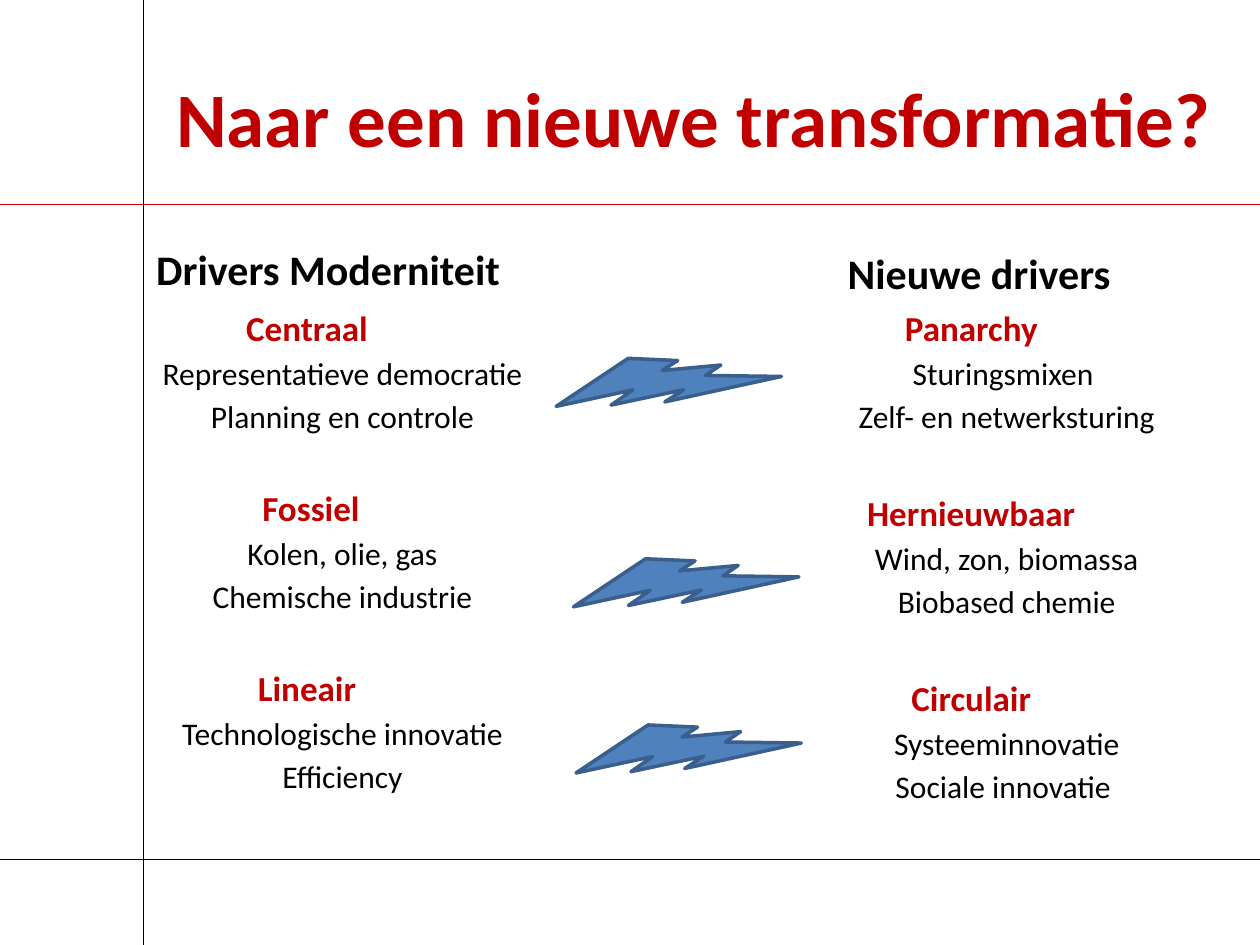
"""Build the slide on old and new drivers of transformation."""
from lxml import etree
from pptx import Presentation
from pptx.dml.color import RGBColor
from pptx.enum.shapes import MSO_CONNECTOR, MSO_SHAPE
from pptx.enum.text import MSO_ANCHOR, PP_ALIGN
from pptx.oxml.ns import qn
from pptx.util import Cm, Pt

LINE = MSO_CONNECTOR.STRAIGHT
BOLT = MSO_SHAPE.LIGHTNING_BOLT
TOP, MIDDLE, BOTTOM = MSO_ANCHOR.TOP, MSO_ANCHOR.MIDDLE, MSO_ANCHOR.BOTTOM
LEFT, CENTER = PP_ALIGN.LEFT, PP_ALIGN.CENTER
RED = RGBColor(0xC0, 0x00, 0x00)
BLACK = RGBColor(0x00, 0x00, 0x00)
BLUE = RGBColor(0x4F, 0x81, 0xBD)
NAVY = RGBColor(0x3A, 0x5F, 0x8C)
WIDE, HIGH = 25.4, 19.05


def style(para, size, color, bold, align):
    para.alignment = align
    font = para.font
    font.name, font.size, font.bold = "Calibri", Pt(size), bold
    font.color.rgb = color


def add_box(x, y, w, h, anchor):
    frame = slide.shapes.add_textbox(Cm(x), Cm(y), Cm(w), Cm(h)).text_frame
    frame.word_wrap = True
    frame.vertical_anchor = anchor
    return frame


deck = Presentation()
deck.slide_width, deck.slide_height = Cm(WIDE), Cm(HIGH)
slide = deck.slides.add_slide(deck.slide_layouts[5])

title = slide.shapes.title
title.left, title.top = Cm(3.3), Cm(0.76)
title.width, title.height = Cm(21.62), Cm(3.18)
title.text_frame.text = "Naar een nieuwe transformatie?"
title.text_frame.vertical_anchor = MIDDLE
style(title.text_frame.paragraphs[0], 44, RED, True, LEFT)

rules = [
    (WIDE, 17.32, 0, 17.32, BLACK),
    (2.89, 0, 2.89, HIGH, BLACK),
    (WIDE, 4.12, 0, 4.12, RED),
]
for x1, y1, x2, y2, color in rules:
    rule = slide.shapes.add_connector(LINE, Cm(x1), Cm(y1), Cm(x2), Cm(y2))
    rule.line.color.rgb = color
    rule.line.width = Pt(0.75)
    etree.SubElement(rule.element.spPr, qn("a:effectLst"))

columns = [
    ("Drivers Moderniteit", 2.9, 4.27, 1.04, 29.2, [
        ("Centraal ", "Representatieve democratie", "Planning en controle"),
        ("Fossiel", "Kolen, olie, gas", "Chemische industrie"),
        ("Lineair ", "Technologische innovatie", "Efficiency"),
    ]),
    ("Nieuwe drivers", 16.84, 4.35, 14.43, 32.1, [
        ("Panarchy ", "Sturingsmixen ", "Zelf- en netwerksturing"),
        ("Hernieuwbaar ", "Wind, zon, biomassa", "Biobased chemie"),
        ("Circulair ", "Systeeminnovatie", "Sociale innovatie "),
    ]),
]
for head, x, y, left, gap, groups in columns:
    frame = add_box(x, y, 10.46, 1.78, BOTTOM)
    frame.text = head
    style(frame.paragraphs[0], 24, BLACK, True, LEFT)

    frame = add_box(left, 6.05, 10.46, 10.97, TOP)
    frame.text = "\n".join(text for group in groups for text in group)
    for i, para in enumerate(frame.paragraphs):
        if i % 3:
            para.level = 1
            props = para._p.get_or_add_pPr()
            props.set("marL", str(Cm(1.27)))
            props.set("indent", "0")
            para.space_before = Pt(3.2)
            style(para, 18, BLACK, False, CENTER)
        else:
            if i:
                para.space_before = Pt(gap)
            style(para, 20, RED, True, CENTER)

for x, y in [(11.23, 6.96), (11.58, 11), (11.63, 14.35)]:
    bolt = slide.shapes.add_shape(BOLT, Cm(x), Cm(y), Cm(4.39), Cm(1.6))
    bolt.rotation = 335.8
    bolt.shadow.inherit = False
    bolt.fill.solid()
    bolt.fill.fore_color.rgb = BLUE
    bolt.line.color.rgb = NAVY
    bolt.line.width = Pt(2)

deck.save("out.pptx")
